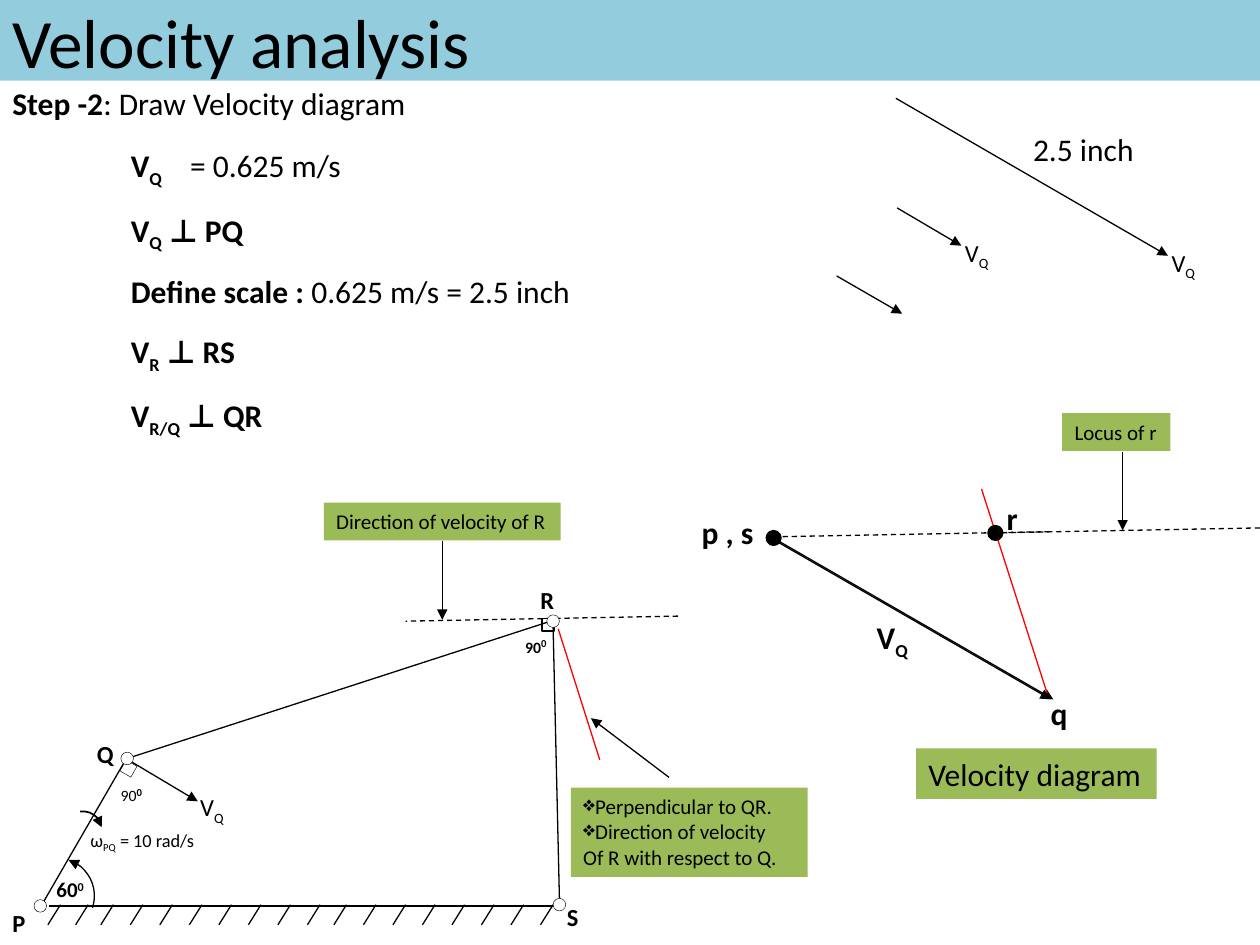
from dataclasses import dataclass
from typing import NamedTuple, Optional

from lxml.etree import SubElement
from pptx import Presentation
from pptx.dml.color import RGBColor
from pptx.enum.dml import MSO_LINE
from pptx.enum.shapes import MSO_CONNECTOR, MSO_SHAPE
from pptx.enum.text import MSO_ANCHOR, MSO_AUTO_SIZE, PP_ALIGN
from pptx.oxml.ns import qn
from pptx.util import Inches, Pt

HUES = {"ink": "000000", "paper": "FFFFFF", "sky": "93CDDD",
        "leaf": "9BBB59", "red": "FF0000"}

deck = Presentation()
deck.slide_width = Inches(10)
deck.slide_height = Inches(7.5)
page = deck.slides.add_slide(deck.slide_layouts[6])
pool = page.shapes


class Run(NamedTuple):
    text: str
    base: int = 0
    bold: Optional[bool] = None
    size: Optional[float] = None


@dataclass
class Line:
    start: tuple
    end: tuple
    hue: str = "ink"
    arrow: bool = False
    dash: bool = False


@dataclass
class Mark:
    kind: MSO_SHAPE
    left: float
    top: float
    size: float = 0.1
    fill: Optional[str] = None
    width: float = 0.25
    turn: float = 0
    tip: Optional[str] = None


@dataclass
class Label:
    box: tuple
    runs: list
    size: float = 14
    bold: bool = False


def color(name: str) -> RGBColor:
    return RGBColor.from_string(HUES[name])


def add_tip(shape, end: str) -> None:
    SubElement(shape.line._get_or_add_ln(), qn("a:" + end), type="triangle")


def draw_line(item: Line):
    link = pool.add_connector(MSO_CONNECTOR.STRAIGHT,
                              *[Inches(n) for n in item.start + item.end])
    link.line.color.rgb = color(item.hue)
    link.line.width = Pt(0.75)
    if item.dash:
        link.line.dash_style = MSO_LINE.DASH
    if item.arrow:
        add_tip(link, "tailEnd")
    SubElement(link._element.spPr, qn("a:effectLst"))
    return link


def draw_mark(item: Mark) -> None:
    side = Inches(item.size)
    shape = pool.add_shape(item.kind, Inches(item.left), Inches(item.top), side, side)
    shape.shadow.inherit = False
    shape.rotation = item.turn
    if item.fill:
        shape.fill.solid()
        shape.fill.fore_color.rgb = color(item.fill)
    else:
        shape.fill.background()
    shape.line.color.rgb = color("ink")
    shape.line.width = Pt(item.width)
    if item.tip:
        add_tip(shape, item.tip)


def write(box: tuple, lines: list, *, size: float = 14, bold: bool = False,
          fill: Optional[str] = None, wrap: bool = False, grow: bool = True,
          space: Optional[float] = None, tab: Optional[float] = None,
          points: int = 0, anchor: MSO_ANCHOR = MSO_ANCHOR.TOP):
    place = [Inches(n) for n in box]
    if fill:
        shape = pool.add_shape(MSO_SHAPE.RECTANGLE, *place)
        shape.shadow.inherit = False
        shape.fill.solid()
        shape.fill.fore_color.rgb = color(fill)
        shape.line.fill.background()
    else:
        shape = pool.add_textbox(*place)
    frame = shape.text_frame
    frame.word_wrap = wrap
    frame.vertical_anchor = anchor
    frame.auto_size = MSO_AUTO_SIZE.SHAPE_TO_FIT_TEXT if grow else MSO_AUTO_SIZE.NONE
    for row, runs in enumerate(lines):
        para = frame.add_paragraph() if row else frame.paragraphs[0]
        para.alignment = PP_ALIGN.LEFT
        if space:
            para.line_spacing = space
        props = para._p.get_or_add_pPr()
        if row < points:
            SubElement(props, qn("a:buChar"), char="❖")
        if tab and any("\t" in run.text for run in runs):
            stops = SubElement(props, qn("a:tabLst"))
            SubElement(stops, qn("a:tab"), pos=str(Inches(tab)), algn="l")
        for run in runs:
            part = para.add_run()
            part.text = run.text
            part.font.name = "Calibri"
            part.font.size = Pt(run.size or size)
            part.font.bold = bold if run.bold is None else run.bold
            part.font.color.rgb = color("ink")
            if run.base:
                part._r.get_or_add_rPr().set("baseline", str(run.base * 1000))
    return shape


def speed(sub: str, rest: str = "") -> list:
    return [Run("V"), Run(sub, -25)] + ([Run(rest)] if rest else [])


RECT, OVAL, ARC = MSO_SHAPE.RECTANGLE, MSO_SHAPE.OVAL, MSO_SHAPE.ARC

write((0, 0, 10, 0.64), [[Run("Velocity analysis")]], size=39.6, fill="sky",
      wrap=True, grow=False, anchor=MSO_ANCHOR.MIDDLE)
write((0, 0.62, 3.36, 0.4),
      [[Run("Step -2", bold=True), Run(": Draw Velocity diagram")]], size=18)
write((0.94, 0.94, 3.72, 3.28), [
    speed("Q") + [Run("\t= 0.625 m/s", bold=False)],
    speed("Q", " ⊥ PQ"),
    [Run("Define scale : "), Run("0.625 m/s = 2.5 inch", bold=False)],
    speed("R", " ⊥ RS"),
    speed("R/Q", " ⊥ QR"),
], size=18, bold=True, space=1.5, tab=0.47)

hatch = [0.48, 0.7] + [left + step * 1.64 / 7
                       for left in (0.9, 2.75) for step in range(8)]
lines = [Line((x, 7.18), (x - 0.1, 7.34)) for x in hatch] + [
    Line((0.39, 7.19), (4.39, 7.19)),
    Line((0.35, 7.15), (0.98, 6.06)),
    Line((1.01, 6.02), (4.34, 4.94)),
    Line((4.44, 7.13), (4.39, 4.98)),
    Line((1.05, 6.05), (1.57, 6.36), arrow=True),
    Line((7.11, 0.78), (9.27, 2.03), arrow=True),
    Line((7.12, 1.65), (7.63, 1.95), arrow=True),
    Line((6.64, 2.19), (7.16, 2.49), arrow=True),
    Line((6.19, 4.3), (8.36, 5.55), arrow=True),
    Line((6.17, 4.3), (8.34, 5.55), arrow=True),
    Line((5.38, 4.89), (3.22, 4.93), dash=True),
    Line((10, 4.19), (7.84, 4.23), dash=True),
    Line((8.33, 4.22), (6.17, 4.26), dash=True),
    Line((8.91, 3.59), (8.91, 4.21), arrow=True),
    Line((5.31, 6.17), (4.69, 5.7), arrow=True),
    Line((4.76, 6.03), (4.43, 4.99), "red"),
    Line((8.31, 5.5), (7.79, 3.88), "red"),
]
marks = [
    Mark(RECT, 4.3, 4.91, width=1),
    Mark(RECT, 0.97, 6.05, turn=30),
    Mark(ARC, 0.15, 6.81, 0.6, width=0.75, turn=18.4, tip="headEnd"),
    Mark(ARC, 0.51, 6.44, 0.3, width=1, turn=350.8, tip="tailEnd"),
] + [Mark(OVAL, x, y, fill="paper")
     for x, y in ((0.27, 7.14), (4.39, 7.13), (0.96, 5.97), (4.34, 4.88))
     ] + [Mark(OVAL, x, y, fill="ink", width=2)
          for x, y in ((6.09, 4.22), (7.85, 4.18))]
labels = [
    Label((0, 7.16, 0.31, 0.34), [Run("P")], bold=True),
    Label((4.4, 7.11, 0.29, 0.34), [Run("S")], bold=True),
    Label((0.67, 5.82, 0.34, 0.34), [Run("Q")], bold=True),
    Label((4.19, 4.59, 0.31, 0.34), [Run("R")], bold=True),
    Label((0.35, 6.91, 0.43, 0.3), [Run("60"), Run("0", 30)], 12, True),
    Label((0.86, 6.17, 0.38, 0.29), [Run("90"), Run("0", 30, True, 10.5)], 9),
    Label((4.07, 4.99, 0.38, 0.29), [Run("90"), Run("0", 30, size=10.5)], 9, True),
    Label((0.62, 6.53, 1.1, 0.29),
          [Run("ω"), Run("PQ", -25), Run(" = 10 rad/s")], 10.5),
    Label((1.49, 6.24, 0.4, 0.34), speed("Q")),
    Label((9.2, 1.92, 0.4, 0.34), speed("Q")),
    Label((7.56, 1.84, 0.4, 0.34), speed("Q")),
    Label((8.1, 0.98, 1.01, 0.4), [Run("2.5 inch")], 18),
    Label((6.86, 4.86, 0.46, 0.4), speed("Q"), 18, True),
    Label((5.47, 4.02, 0.61, 0.4), [Run("p , s")], 18, True),
    Label((8.24, 5.46, 0.34, 0.4), [Run("q")], 18, True),
    Label((7.89, 3.91, 0.29, 0.4), [Run("r")], 18, True),
]
for item in lines:
    draw_line(item)
for item in marks:
    draw_mark(item)
for item in labels:
    write(item.box, [item.runs], size=item.size, bold=item.bold)

note = write((2.57, 3.99, 1.88, 0.3), [[Run("Direction of velocity of R")]],
             size=12, fill="leaf")
draw_line(Line((3.51, 4.29), (3.51, 4.92), arrow=True)).begin_connect(note, 2)
write((8.43, 3.28, 0.86, 0.3), [[Run("Locus of r")]], size=12, fill="leaf")
write((7.27, 5.94, 1.91, 0.4), [[Run("Velocity diagram")]], size=18, fill="leaf")
write((4.53, 6.25, 1.88, 0.71),
      [[Run("Perpendicular to QR.")], [Run("Direction of velocity")],
       [Run("Of R with respect to Q.")]],
      size=12, fill="leaf", wrap=True, points=2)

deck.save("out.pptx")
